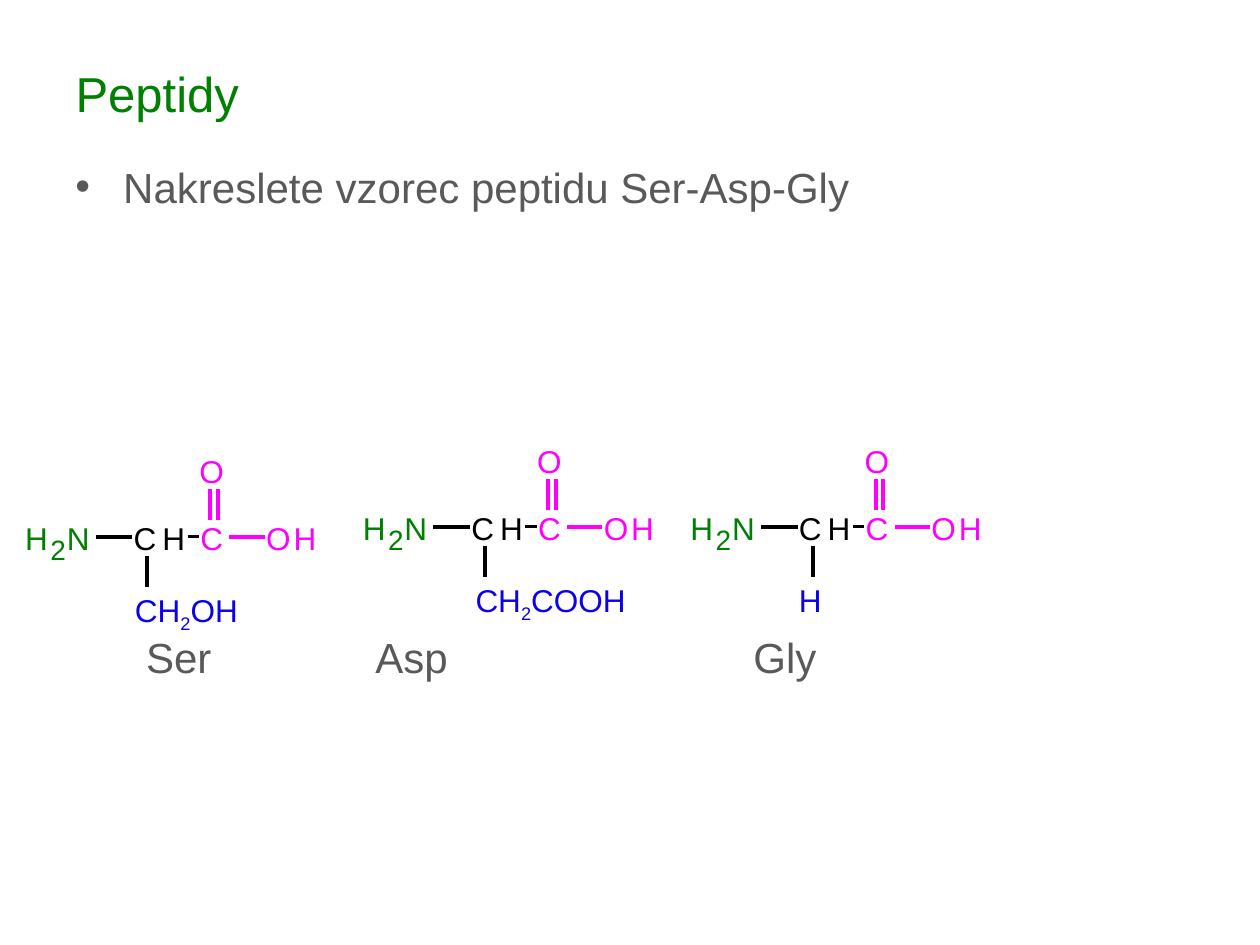
import pptx
import pptx.dml.color
import pptx.enum.shapes
import pptx.enum.text
import pptx.oxml.ns
import pptx.util
from lxml import etree
from pptx.util import Inches

GREEN, GREY, BLACK, MAGENTA, BLUE = "008000", "595959", "000000", "FF00FF", "0C01EF"
ATOMS = [
    ("H", 0, 0.53, 0.18, 18, GREEN),
    ("2", 0.2, 0.64, 0.12, 16, GREEN),
    ("N", 0.33, 0.53, 0.18, 18, GREEN),
    ("C", 0.86, 0.53, 0.18, 18, BLACK),
    ("H", 1.08, 0.53, 0.2, 18, BLACK),
    ("C", 1.39, 0.53, 0.18, 18, MAGENTA),
    ("O", 1.91, 0.53, 0.2, 18, MAGENTA),
    ("H", 2.13, 0.53, 0.18, 18, MAGENTA),
    ("O", 1.38, 0, 0.2, 18, MAGENTA),
]
BONDS = [
    (0.56, 0.67, 0.85, 0.67, 2.25, BLACK),
    (1.29, 0.67, 1.38, 0.67, 1.5, BLACK),
    (0.97, 0.82, 0.97, 1.07, 2.25, BLACK),
    (1.62, 0.67, 1.9, 0.67, 2.25, MAGENTA),
    (1.47, 0.54, 1.47, 0.29, 2.25, MAGENTA),
    (1.53, 0.54, 1.53, 0.29, 2.25, MAGENTA),
]
AMINO_ACIDS = [
    (0.2, 3.59, ["CH", "2", "OH"], 0.84),
    (2.88, 3.51, ["CH", "2", "COOH"], 1.26),
    (5.48, 3.51, ["H"], 0.18),
]
NAMES = [("Ser", 0), ("Asp", 1.82), ("Gly", 4.82)]


def rgb(color):
    """Turn a hex string into a colour."""
    return pptx.dml.color.RGBColor.from_string(color)


def style_font(font, size, color):
    """Set the typeface, size and colour of a font."""
    font.name = "Arial"
    font.size = pptx.util.Pt(size)
    font.color.rgb = rgb(color)


def clear_margins(frame):
    """Remove the inner margins of a text frame."""
    frame.margin_left = frame.margin_right = frame.margin_top = frame.margin_bottom = 0


def add_title(slide, left, top, width, height):
    """Place and format the slide title."""
    title = slide.shapes.title
    title.left, title.top = Inches(left), Inches(top)
    title.width, title.height = Inches(width), Inches(height)
    title.text_frame.text = "Peptidy"
    title.text_frame.vertical_anchor = pptx.enum.text.MSO_ANCHOR.MIDDLE
    paragraph = title.text_frame.paragraphs[0]
    paragraph.alignment = pptx.enum.text.PP_ALIGN.LEFT
    style_font(paragraph.runs[0].font, 28, GREEN)


def add_task(slide, left, top, width, height):
    """Add the bulleted task."""
    box = slide.shapes.add_textbox(Inches(left), Inches(top), Inches(width), Inches(height))
    box.text_frame.word_wrap = True
    paragraph = box.text_frame.paragraphs[0]
    paragraph.text = "Nakreslete vzorec peptidu Ser-Asp-Gly"
    properties = paragraph._p.get_or_add_pPr()
    properties.set("marL", str(Inches(0.38)))
    properties.set("indent", str(Inches(-0.38)))
    etree.SubElement(properties, pptx.oxml.ns.qn("a:buFont"), typeface="Arial")
    etree.SubElement(properties, pptx.oxml.ns.qn("a:buChar"), char="•")
    style_font(paragraph.runs[0].font, 24, GREY)


def add_names(slide, left, top, width, height):
    """Add the row of amino acid names below the formulas."""
    for name, offset in NAMES:
        box = slide.shapes.add_textbox(
            Inches(left + offset), Inches(top), Inches(width), Inches(height))
        frame = box.text_frame
        clear_margins(frame)
        frame.word_wrap = True
        frame.text = name
        style_font(frame.paragraphs[0].runs[0].font, 24, GREY)


def add_bond(group, x1, y1, x2, y2, width, color):
    """Draw one bond as a straight line."""
    bond = group.shapes.add_connector(
        pptx.enum.shapes.MSO_CONNECTOR.STRAIGHT, Inches(x1), Inches(y1), Inches(x2), Inches(y2))
    bond.line.width = pptx.util.Pt(width)
    bond.line.color.rgb = rgb(color)
    etree.SubElement(bond._element.spPr, pptx.oxml.ns.qn("a:effectLst"))


def add_symbol(group, parts, left, top, width, size, color):
    """Add a centred chemical symbol, with digits among its parts as subscripts."""
    box = group.shapes.add_textbox(
        Inches(left), Inches(top), Inches(width), Inches(size / 60))
    frame = box.text_frame
    clear_margins(frame)
    frame.word_wrap = False
    frame.auto_size = pptx.enum.text.MSO_AUTO_SIZE.SHAPE_TO_FIT_TEXT
    paragraph = frame.paragraphs[0]
    paragraph.alignment = pptx.enum.text.PP_ALIGN.CENTER
    for part in parts:
        run = paragraph.add_run()
        run.text = part
        style_font(run.font, size, color)
        if part.isdigit() and len(parts) > 1:
            run.font._element.set("baseline", "-25000")


def add_amino_acid(slide, left, top, side_chain, chain_width):
    """Draw one amino acid from its top left corner."""
    group = slide.shapes.add_group_shape()
    for x1, y1, x2, y2, width, color in BONDS:
        add_bond(group, left + x1, top + y1, left + x2, top + y2, width, color)
    for symbol, x, y, width, size, color in ATOMS:
        add_symbol(group, [symbol], left + x, top + y, width, size, color)
    add_symbol(group, side_chain, left + 0.86, top + 1.1, chain_width, 18, BLUE)


def main():
    """Build and save the presentation."""
    presentation = pptx.Presentation()
    presentation.slide_width, presentation.slide_height = Inches(10), Inches(7.5)
    slide = presentation.slides.add_slide(presentation.slide_layouts[5])
    add_title(slide, 0.5, 0.31, 9, 0.85)
    add_task(slide, 0.5, 1.23, 9, 0.5)
    add_names(slide, 1.16, 5.01, 0.8, 0.4)
    for amino_acid in AMINO_ACIDS:
        add_amino_acid(slide, *amino_acid)
    presentation.save("out.pptx")


if __name__ == "__main__":
    main()
